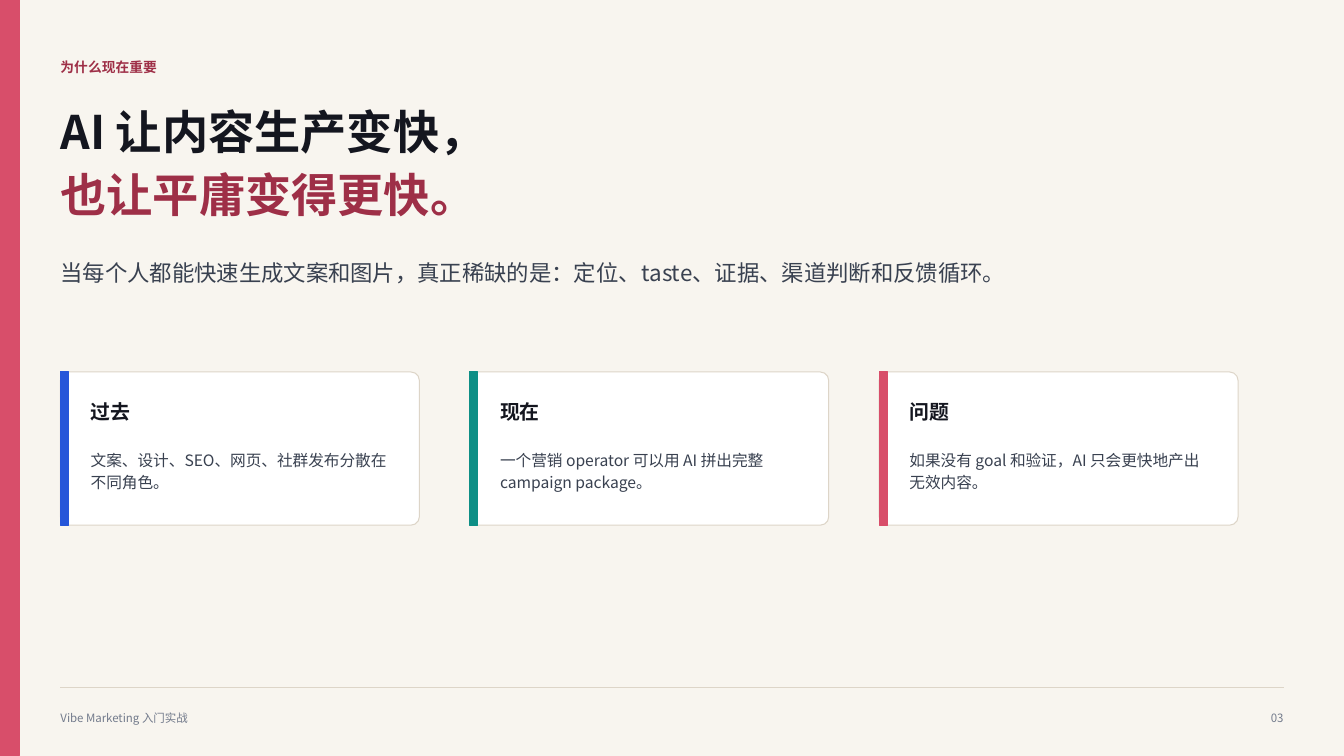
from lxml.etree import SubElement
from pptx import Presentation
from pptx.dml.color import RGBColor
from pptx.enum.shapes import MSO_CONNECTOR, MSO_SHAPE
from pptx.enum.text import PP_ALIGN
from pptx.oxml.ns import qn
from pptx.util import Inches, Pt

FONT = "Noto Sans CJK SC"
COLORS = {
    "paper": "F8F5EF", "white": "FFFFFF", "border": "DDD5C8",
    "ink": "14161F", "body": "394150", "muted": "737B8C", "wine": "9E2F47",
    "rose": "D84E6A", "blue": "2656D9", "teal": "0E8F86",
}
RGB = {name: RGBColor.from_string(value) for name, value in COLORS.items()}
LEFT = 0.6

prs = Presentation()
prs.slide_width, prs.slide_height = Inches(13.33), Inches(7.5)
s = prs.slides.add_slide(prs.slide_layouts[6])
s.background.fill.solid()
s.background.fill.fore_color.rgb = RGB["paper"]


def add_box(kind, x, y, w, h, fill, line):
    sp = s.shapes.add_shape(kind, Inches(x), Inches(y), Inches(w), Inches(h))
    sp.shadow.inherit = False
    sp.fill.solid()
    sp.fill.fore_color.rgb = RGB[fill]
    sp.line.color.rgb = RGB[line]
    sp.line.width = Pt(0.75)
    return sp


def add_text(text, x, y, w, h, size, color, bold=False, spacing=1.12, align=PP_ALIGN.LEFT):
    tf = s.shapes.add_textbox(Inches(x), Inches(y), Inches(w), Inches(h)).text_frame
    tf.margin_left = tf.margin_right = tf.margin_top = tf.margin_bottom = 0
    tf.word_wrap = True
    p = tf.paragraphs[0]
    p.text = text
    p.alignment = align
    p.line_spacing = spacing
    p.font.size = Pt(size)
    p.font.bold = bold
    p.font.color.rgb = RGB[color]
    p.font.name = FONT
    SubElement(p._p.pPr.find(qn("a:defRPr")), qn("a:ea"), typeface=FONT)


add_box(MSO_SHAPE.RECTANGLE, 0, 0, 0.19, 7.5, "rose", "rose")

rule = s.shapes.add_connector(
    MSO_CONNECTOR.STRAIGHT, Inches(LEFT), Inches(6.82), Inches(12.73), Inches(6.82))
rule.line.color.rgb = RGB["border"]
rule.line.width = Pt(0.75)
SubElement(rule._element.spPr, qn("a:effectLst"))

add_text("Vibe Marketing 入门实战", LEFT, 7.04, 5.42, 0.25, 8.2, "muted")
add_text("03", 12.23, 7.04, 0.5, 0.25, 8.2, "muted", align=PP_ALIGN.RIGHT)

add_text("为什么现在重要", LEFT, 0.56, 8.96, 0.25, 9.8, "wine", bold=True)
add_text("AI 让内容生产变快，", LEFT, 1.06, 7.92, 0.58, 33, "ink", bold=True, spacing=0.96)
add_text("也让平庸变得更快。", LEFT, 1.69, 8.12, 0.6, 33, "wine", bold=True, spacing=0.96)
add_text("当每个人都能快速生成文案和图片，真正稀缺的是：定位、taste、证据、渠道判断和反馈循环。",
         LEFT, 2.54, 9.38, 0.46, 16, "body")

cards = [
    ("过去", "文案、设计、SEO、网页、社群发布分散在不同角色。", "blue"),
    ("现在", "一个营销 operator 可以用 AI 拼出完整 campaign package。", "teal"),
    ("问题", "如果没有 goal 和验证，AI 只会更快地产出无效内容。", "rose"),
]
CARD_TOP, CARD_W, CARD_H, CARD_STEP = 3.69, 3.56, 1.52, 4.06
for i, (title, body, accent) in enumerate(cards):
    x = LEFT + i * CARD_STEP
    card = add_box(MSO_SHAPE.ROUNDED_RECTANGLE, x, CARD_TOP, CARD_W, CARD_H, "white", "border")
    card.adjustments[0] = 0.055
    add_box(MSO_SHAPE.RECTANGLE, x, CARD_TOP, 0.08, CARD_H, accent, accent)
    add_text(title, x + 0.3, CARD_TOP + 0.25, 3.06, 0.29, 14.2, "ink", bold=True)
    add_text(body, x + 0.3, CARD_TOP + 0.75, 2.98, 0.65, 11.2, "body", spacing=1.18)

prs.save("out.pptx")
